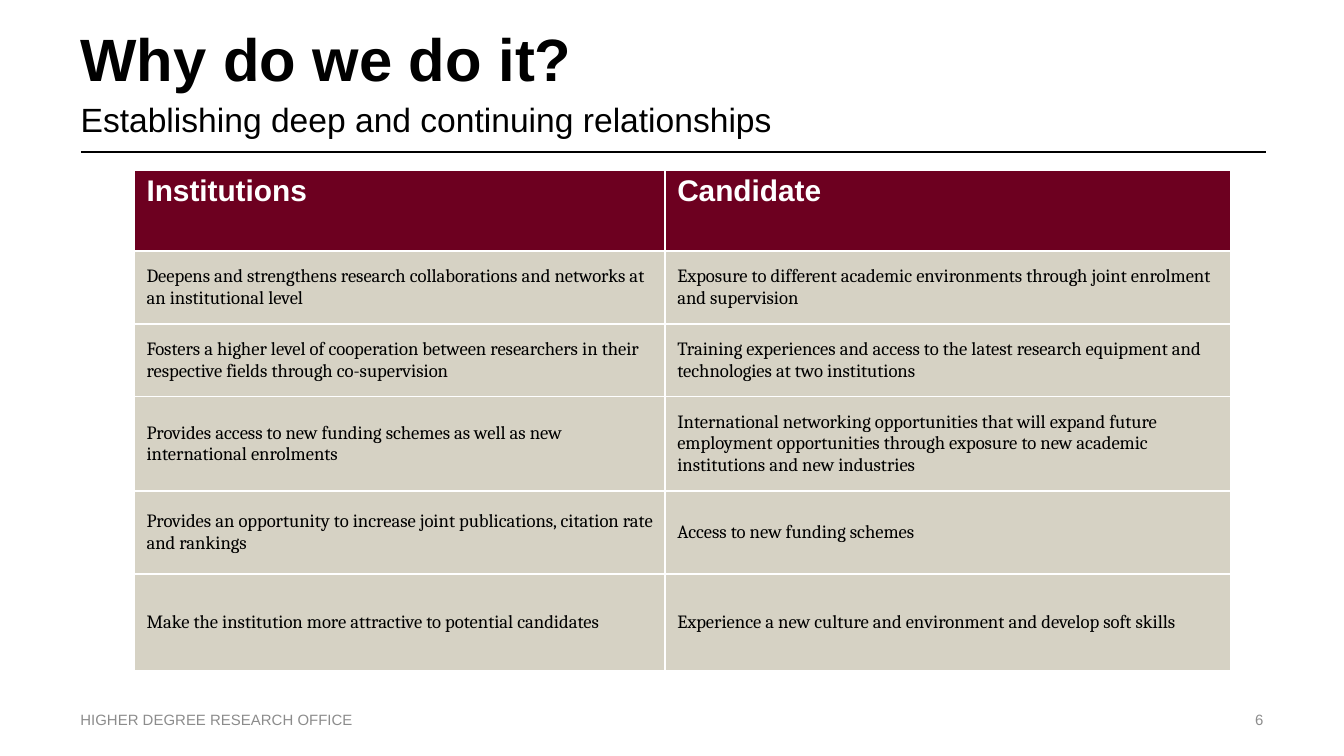
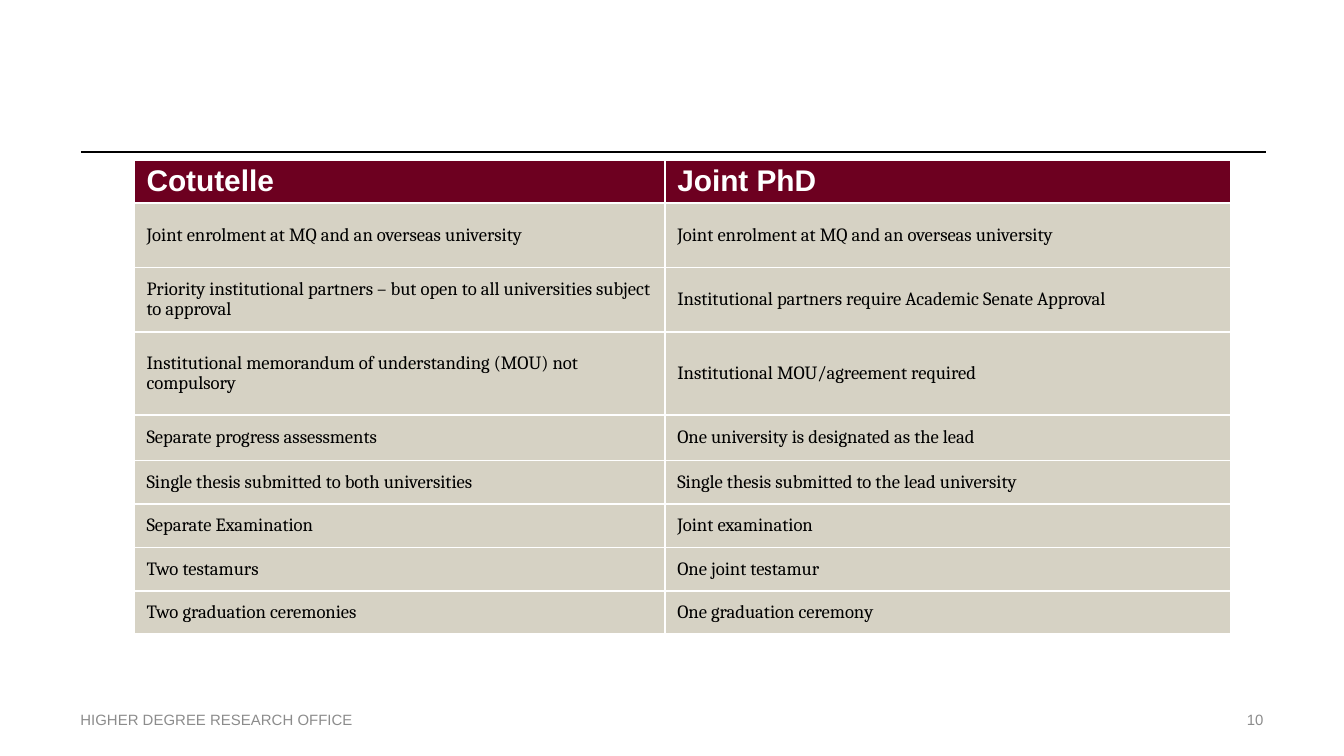
import pptx
import pptx.dml.color
import pptx.enum.shapes
import pptx.enum.text
import pptx.oxml.ns
import pptx.util
from lxml import etree

Cm, Pt = pptx.util.Cm, pptx.util.Pt
ANCHOR = pptx.enum.text.MSO_ANCHOR
ALIGN = pptx.enum.text.PP_ALIGN

COLOURS = {
    "text": "000000",
    "header": "6D0020",
    "header_text": "FFFFFF",
    "cell": "D6D2C4",
    "border": "FFFFFF",
    "footer": "8C8C8C",
}
HEADING_FONT, CELL_FONT = "Arial", "Cambria"
FOOTER = "HIGHER DEGREE RESEARCH OFFICE"
TITLE_LAYOUT, BLANK_LAYOUT = 1, 6
TABLE_LEFT, COLUMN_WIDTHS = 2.54, (10.03, 10.69)

# Each table row is (height in cm, left text, right text).
SLIDES = [
    {
        "number": "6",
        "title": "Why do we do it?",
        "subtitle": "Establishing deep and continuing relationships",
        "table_top": 3.21,
        "tight_rows": 0,
        "rows": [
            (1.53, "Institutions", "Candidate"),
            (1.38, "Deepens and strengthens research collaborations and networks at an institutional level",
             "Exposure to different academic environments through joint enrolment and supervision"),
            (1.38, "Fosters a higher level of cooperation between researchers in their respective fields "
             "through co-supervision",
             "Training experiences and access to the latest research equipment and technologies "
             "at two institutions"),
            (1.78, "Provides access to new funding schemes as well as new international enrolments",
             "International networking opportunities that will expand future employment opportunities "
             "through exposure to new academic institutions and new industries"),
            (1.57, "Provides an opportunity to increase joint publications, citation rate and rankings",
             "Access to new funding schemes"),
            (1.83, "Make the institution more attractive to potential candidates",
             "Experience a new culture and environment and develop soft skills"),
        ],
    },
    {
        "number": "10",
        "table_top": 3.03,
        "tight_rows": 5,
        "rows": [
            (0.69, "Cotutelle", "Joint PhD"),
            (1.22, "Joint enrolment at MQ and an overseas university",
             "Joint enrolment at MQ and an overseas university"),
            (1.22, "Priority institutional partners – but open to all universities subject to approval",
             "Institutional partners require Academic Senate Approval"),
            (1.57, "Institutional memorandum of understanding (MOU) not compulsory",
             "Institutional MOU/agreement required"),
            (0.86, "Separate progress assessments", "One university is designated as the lead"),
            (0.82, "Single thesis submitted to both universities",
             "Single thesis submitted to the lead university"),
            (0.82, "Separate Examination", "Joint examination"),
            (0.82, "Two testamurs", "One joint testamur"),
            (0.82, "Two graduation ceremonies", "One graduation ceremony"),
        ],
    },
]


def rgb(name):
    return pptx.dml.color.RGBColor.from_string(COLOURS[name])


def format_paragraph(paragraph, font, size, colour, bold=False, align=ALIGN.LEFT):
    paragraph.alignment = align
    paragraph.font.name = font
    paragraph.font.size = Pt(size)
    paragraph.font.bold = bold
    paragraph.font.color.rgb = rgb(colour)


def fill_box(shape, box, text, size, colour, anchor, bold=False, align=ALIGN.LEFT):
    """Place a text shape at box (cm), write one line in it and return the paragraph."""
    shape.left, shape.top, shape.width, shape.height = map(Cm, box)
    frame = shape.text_frame
    frame.word_wrap = True
    frame.auto_size = pptx.enum.text.MSO_AUTO_SIZE.NONE
    frame.vertical_anchor = anchor
    frame.text = text
    paragraph = frame.paragraphs[0]
    format_paragraph(paragraph, HEADING_FONT, size, colour, bold, align)
    return paragraph


def add_headings(slide, title, subtitle):
    fill_box(slide.shapes.title, (1.27, 0, 17.78, 1.9), title, 32, "text", ANCHOR.BOTTOM, bold=True)
    paragraph = fill_box(slide.placeholders[1], (1.27, 1.75, 17.78, 1.12), subtitle, 18, "text", ANCHOR.TOP)
    paragraph.space_before, paragraph.space_after = Pt(0), Pt(3)
    properties = paragraph._p.get_or_add_pPr()
    properties.set("marL", "0")
    properties.set("indent", "0")
    bullet = etree.Element(pptx.oxml.ns.qn("a:buNone"))
    properties.find(pptx.oxml.ns.qn("a:spcAft")).addnext(bullet)


def add_frame(slide, number):
    """Add the rule under the headings, the footer and the slide number."""
    rule = slide.shapes.add_connector(
        pptx.enum.shapes.MSO_CONNECTOR.STRAIGHT, Cm(1.53), Cm(2.88), Cm(23.93), Cm(2.88))
    rule.line.color.rgb = rgb("text")
    rule.line.width = Pt(1)
    etree.SubElement(rule._element.spPr, pptx.oxml.ns.qn("a:effectLst"))
    for left, text, align in ((18.21, number, ALIGN.RIGHT), (1.27, FOOTER, ALIGN.LEFT)):
        box = (left, 13.23, 5.92, 0.76)
        shape = slide.shapes.add_textbox(*map(Cm, box))
        fill_box(shape, box, text, 8, "footer", ANCHOR.MIDDLE, align=align)


def add_borders(cell):
    properties = cell._tc.get_or_add_tcPr()
    for side in ("lnL", "lnR", "lnT", "lnB"):
        line = etree.SubElement(properties, pptx.oxml.ns.qn("a:" + side), w=str(Pt(1)))
        fill = etree.SubElement(line, pptx.oxml.ns.qn("a:solidFill"))
        etree.SubElement(fill, pptx.oxml.ns.qn("a:srgbClr"), val=COLOURS["border"])


def format_cell(cell, text, is_header, is_tight):
    cell.margin_left = cell.margin_right = Cm(0.23)
    cell.margin_top = cell.margin_bottom = Cm(0.09)
    add_borders(cell)
    cell.fill.solid()
    cell.fill.fore_color.rgb = rgb("header" if is_header else "cell")
    cell.text = text
    paragraph = cell.text_frame.paragraphs[0]
    if is_header:
        cell.vertical_anchor = ANCHOR.TOP
        format_paragraph(paragraph, HEADING_FONT, 16, "header_text", bold=True)
    else:
        cell.vertical_anchor = ANCHOR.MIDDLE
        format_paragraph(paragraph, CELL_FONT, 10, "text")
    if is_tight:
        paragraph.line_spacing = 0.9


def add_comparison(slide, rows, top, tight_rows):
    """Add the two-column table; the first tight_rows body rows have closer lines."""
    height = sum(row[0] for row in rows)
    table = slide.shapes.add_table(
        len(rows), len(COLUMN_WIDTHS), Cm(TABLE_LEFT), Cm(top), Cm(sum(COLUMN_WIDTHS)), Cm(height)).table
    for column, width in zip(table.columns, COLUMN_WIDTHS):
        column.width = Cm(width)
    for index, (row_height, *texts) in enumerate(rows):
        table.rows[index].height = Cm(row_height)
        for cell, text in zip(table.rows[index].cells, texts):
            format_cell(cell, text, index == 0, 1 <= index <= tight_rows)


def main():
    presentation = pptx.Presentation()
    presentation.slide_width, presentation.slide_height = Cm(25.4), Cm(14.29)
    for content in SLIDES:
        layout = TITLE_LAYOUT if "title" in content else BLANK_LAYOUT
        slide = presentation.slides.add_slide(presentation.slide_layouts[layout])
        if "title" in content:
            add_headings(slide, content["title"], content["subtitle"])
        add_frame(slide, content["number"])
        add_comparison(slide, content["rows"], content["table_top"], content["tight_rows"])
    presentation.save("out.pptx")


if __name__ == "__main__":
    main()
